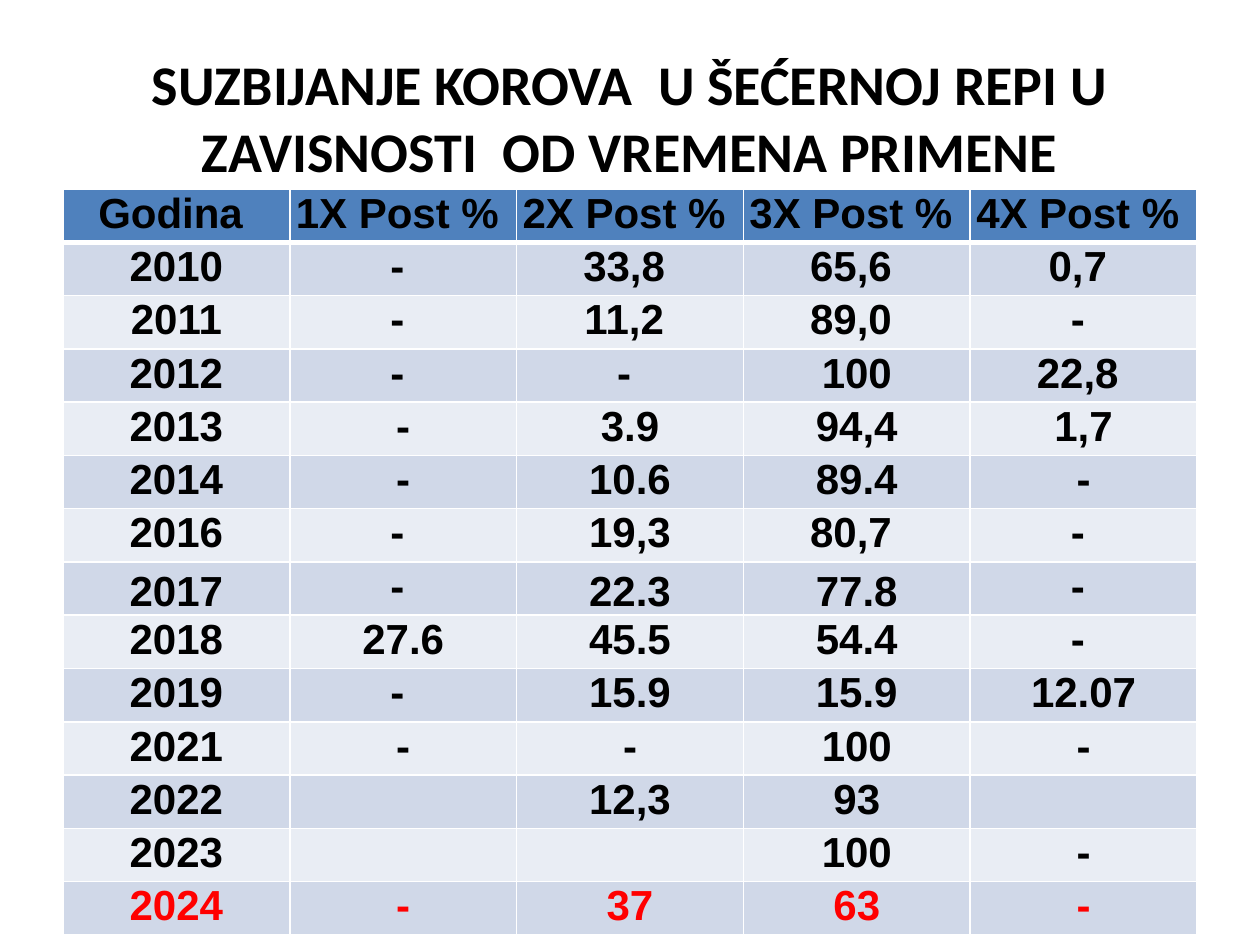
from lxml import etree
from pptx import Presentation
from pptx.dml.color import RGBColor
from pptx.enum.text import MSO_ANCHOR, PP_ALIGN
from pptx.oxml.ns import qn
from pptx.util import Inches, Pt

CENTER = PP_ALIGN.CENTER
TOP, MIDDLE, BOTTOM = MSO_ANCHOR.TOP, MSO_ANCHOR.MIDDLE, MSO_ANCHOR.BOTTOM

# Content
TITLE = "SUZBIJANJE KOROVA  U ŠEĆERNOJ REPI U ZAVISNOSTI  OD VREMENA PRIMENE"
ROWS = [
    ("Godina ", "1X Post % ", "2X Post % ", "3X Post % ", "4X Post % "),
    ("2010", "- ", "33,8 ", "65,6 ", "0,7 "),
    ("2011", "- ", "11,2 ", "89,0 ", "- "),
    ("2012", "- ", "- ", "100", "22,8 "),
    ("2013", "-", "3.9", "94,4", "1,7"),
    ("2014", "-", "10.6", "89.4", "-"),
    ("2016", "- ", "19,3", "80,7 ", "- "),
    ("2017", "- ", "22.3", "77.8", "- "),
    ("2018", "27.6", "45.5", "54.4", "- "),
    ("2019", "- ", "15.9", "15.9", "12.07"),
    ("2021", "-", "-", "100", "-"),
    ("2022", "", "12,3", "93", ""),
    ("2023", "", "", "100", "-"),
    ("2024", "-", "37", "63", "-"),
]
BOTTOM_YEAR = "2017"
HIGHLIGHT_YEAR = "2024"
COLORS = {
    "text": "000000",
    "highlight": "FF0000",
    "header": "4F81BD",
    "odd": "D0D8E8",
    "even": "E9EDF4",
    "border": "FFFFFF",
}

# Layout in inches
LEFT, WIDTH = 0.5, 9
TITLE_TOP, TITLE_HEIGHT = 0.3, 1.25
TABLE_TOP, TABLE_HEIGHT = 1.5, 5.92
CELL_MARGIN = 0.01


def write_text(frame, text, font="Arial", size=24, color="text"):
    paragraph = frame.paragraphs[0]
    paragraph.alignment = CENTER
    run = paragraph.add_run()
    run.text = text
    run.font.name = font
    run.font.size = Pt(size)
    run.font.bold = True
    run.font.color.rgb = RGBColor.from_string(COLORS[color])


def set_borders(cell, **widths):
    properties = cell._tc.get_or_add_tcPr()
    for position, (side, width) in enumerate(widths.items()):
        line = etree.Element(qn(f"a:ln{side}"), w=str(Pt(width)))
        fill = etree.SubElement(line, qn("a:solidFill"))
        etree.SubElement(fill, qn("a:srgbClr"), val=COLORS["border"])
        properties.insert(position, line)


presentation = Presentation()
presentation.slide_width = Inches(10)
presentation.slide_height = Inches(7.5)
slide = presentation.slides.add_slide(presentation.slide_layouts[6])

# Title
title = slide.shapes.add_textbox(
    Inches(LEFT), Inches(TITLE_TOP), Inches(WIDTH), Inches(TITLE_HEIGHT))
title.text_frame.word_wrap = True
title.text_frame.vertical_anchor = MIDDLE
write_text(title.text_frame, TITLE, font="Calibri", size=32)

# Table
table = slide.shapes.add_table(
    len(ROWS), len(ROWS[0]), Inches(LEFT), Inches(TABLE_TOP),
    Inches(WIDTH), Inches(TABLE_HEIGHT)).table

for row_index, values in enumerate(ROWS):
    year = values[0]
    band = "header" if row_index == 0 else ("even", "odd")[row_index % 2]
    color = "highlight" if year == HIGHLIGHT_YEAR else "text"
    for column_index, value in enumerate(values):
        cell = table.cell(row_index, column_index)
        cell.margin_left = cell.margin_top = cell.margin_right = Inches(CELL_MARGIN)
        cell.margin_bottom = 0
        at_bottom = year == BOTTOM_YEAR and value != "- "
        cell.vertical_anchor = BOTTOM if at_bottom else TOP
        cell.fill.solid()
        cell.fill.fore_color.rgb = RGBColor.from_string(COLORS[band])
        set_borders(cell, L=1, R=1, T=3 if row_index == 1 else 1,
                    B=3 if row_index == 0 else 1)
        if value:
            write_text(cell.text_frame, value, color=color)

presentation.save("out.pptx")
